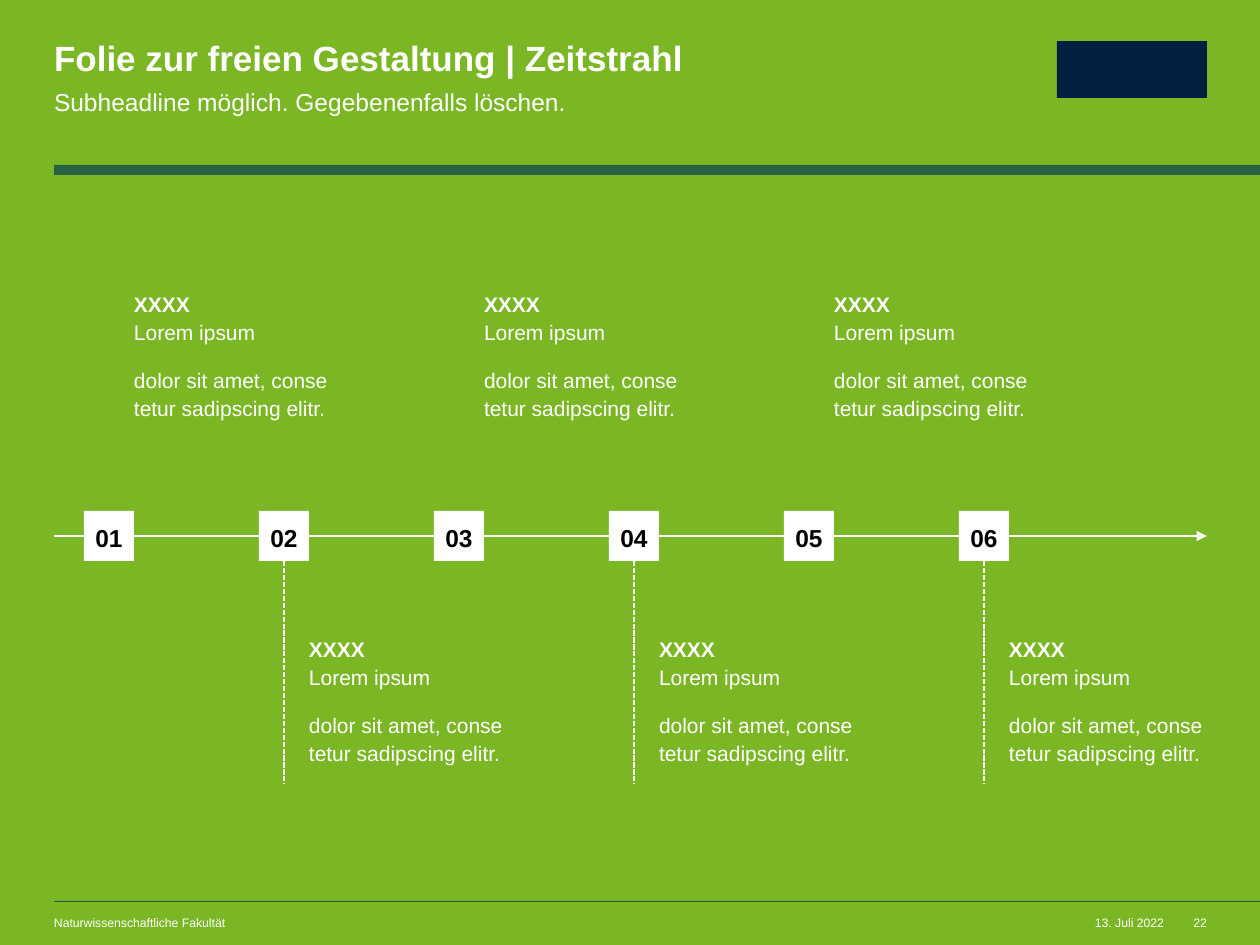
from lxml.etree import SubElement
from pptx import Presentation
from pptx.dml.color import RGBColor
from pptx.enum.dml import MSO_LINE
from pptx.enum.shapes import MSO_CONNECTOR, MSO_SHAPE
from pptx.enum.text import MSO_ANCHOR, MSO_AUTO_SIZE, PP_ALIGN
from pptx.oxml.ns import qn
from pptx.util import Pt

GREEN = RGBColor(0x7B, 0xB7, 0x25)
DARK = RGBColor(0x26, 0x61, 0x41)
NAVY = RGBColor(0x04, 0x1E, 0x42)
WHITE = RGBColor(0xFF, 0xFF, 0xFF)
BLACK = RGBColor(0x00, 0x00, 0x00)

WIDTH, HEIGHT = 1260, 945
LEFT, RIGHT = 54, 1207


def px(n):
    return round(n * 914400 / 126)


def place(shape, x, y, w, h):
    shape.left, shape.top = px(x), px(y)
    shape.width, shape.height = px(w), px(h)


def clear(shape, anchor=MSO_ANCHOR.TOP, wrap=True):
    """Strip the margins of a text frame and return it."""
    frame = shape.text_frame
    frame.margin_left = frame.margin_right = 0
    frame.margin_top = frame.margin_bottom = 0
    frame.vertical_anchor = anchor
    frame.auto_size = MSO_AUTO_SIZE.NONE
    frame.word_wrap = wrap
    return frame


def style(para, size, color=WHITE, bold=False, align=PP_ALIGN.LEFT,
          space=1.0, after=0):
    font = para.font
    font.name, font.size, font.bold = "Arial", Pt(size), bold
    font.color.rgb = color
    para.alignment = align
    para.line_spacing = space
    para.space_before, para.space_after = Pt(0), Pt(after)


def block(shapes, x, y, w, h, color):
    shape = shapes.add_shape(MSO_SHAPE.RECTANGLE, px(x), px(y), px(w), px(h))
    shape.shadow.inherit = False
    shape.fill.solid()
    shape.fill.fore_color.rgb = color
    shape.line.fill.background()
    return shape


def line(shapes, x1, y1, x2, y2):
    rule = shapes.add_connector(
        MSO_CONNECTOR.STRAIGHT, px(x1), px(y1), px(x2), px(y2))
    rule.line.color.rgb = WHITE
    rule.line.width = Pt(1)
    SubElement(rule._element.spPr, qn("a:effectLst"))
    return rule


def header(slide, x, y, w):
    title, body = slide.placeholders
    place(title, x, y, 707, 38)
    title.text = "Folie zur freien Gestaltung | Zeitstrahl"
    style(clear(title).paragraphs[0], 20, bold=True, space=0.9)

    place(body, x, y + 43, 707, 30)
    body.text = "Subheadline möglich. Gegebenenfalls löschen."
    para = clear(body).paragraphs[0]
    style(para, 14, space=1.1, after=8)
    props = para._p.get_or_add_pPr()
    props.set("marL", "0")
    props.set("indent", "0")
    props.insert_element_before(
        props.makeelement(qn("a:buNone"), {}), "a:tabLst", "a:defRPr")

    block(slide.shapes, x, y + 124, w, 10, DARK)
    block(slide.shapes, 1057, y, 150, 57, NAVY)


def footer(slide, x, y, w):
    block(slide.shapes, x, y, w, 1, DARK)
    for text, left, width, align in (
            ("Naturwissenschaftliche Fakultät", x, 566, PP_ALIGN.LEFT),
            ("13. Juli 2022", 1092, 72, PP_ALIGN.RIGHT),
            ("22", 1193, 14, PP_ALIGN.RIGHT)):
        box = slide.shapes.add_textbox(
            px(left), px(y + 14), px(width), px(15))
        para = clear(box, wrap=False).paragraphs[0]
        para.text = text
        style(para, 7, align=align)


def entry(shapes, x, y):
    box = shapes.add_textbox(px(x), px(y), px(195), px(131))
    frame = clear(box, wrap=False)
    head, text = frame.paragraphs[0], frame.add_paragraph()
    head.add_run().text = "XXXX"
    head.runs[0].font.bold = True
    head.add_line_break()
    head.add_run().text = "Lorem ipsum"
    text.text = "dolor sit amet, conse\vtetur sadipscing elitr."
    for para in (head, text):
        style(para, 12, space=1.1, after=12)


def timeline(slide, x, y, w):
    """Draw six steps along an arrow, with texts above and below in turn."""
    side, step = 50, 175
    half = side // 2
    shapes = slide.shapes.add_group_shape().shapes
    axis = line(shapes, x, y, x + w, y)
    SubElement(axis.line._get_or_add_ln(), qn("a:tailEnd"), type="triangle")
    for i in range(6):
        left = x + 30 + i * step
        mark = block(shapes, left, y - half, side, side, WHITE)
        para = clear(mark, MSO_ANCHOR.MIDDLE).paragraphs[0]
        para.text = f"{i + 1:02}"
        style(para, 14, BLACK, True, PP_ALIGN.CENTER, 1.1, 12)
        if i % 2:
            mid = left + half
            stem = line(shapes, mid, y + half, mid, y + 248)
            stem.line.dash_style = MSO_LINE.SQUARE_DOT
            entry(shapes, left + side, y + 98)
        else:
            entry(shapes, left + side, y - 247)


def main():
    deck = Presentation()
    deck.slide_width, deck.slide_height = px(WIDTH), px(HEIGHT)
    slide = deck.slides.add_slide(deck.slide_layouts[1])
    slide.background.fill.solid()
    slide.background.fill.fore_color.rgb = GREEN
    header(slide, LEFT, 41, WIDTH - LEFT)
    footer(slide, LEFT, 901, WIDTH - LEFT)
    timeline(slide, LEFT, 536, RIGHT - LEFT)
    deck.save("out.pptx")


if __name__ == "__main__":
    main()
